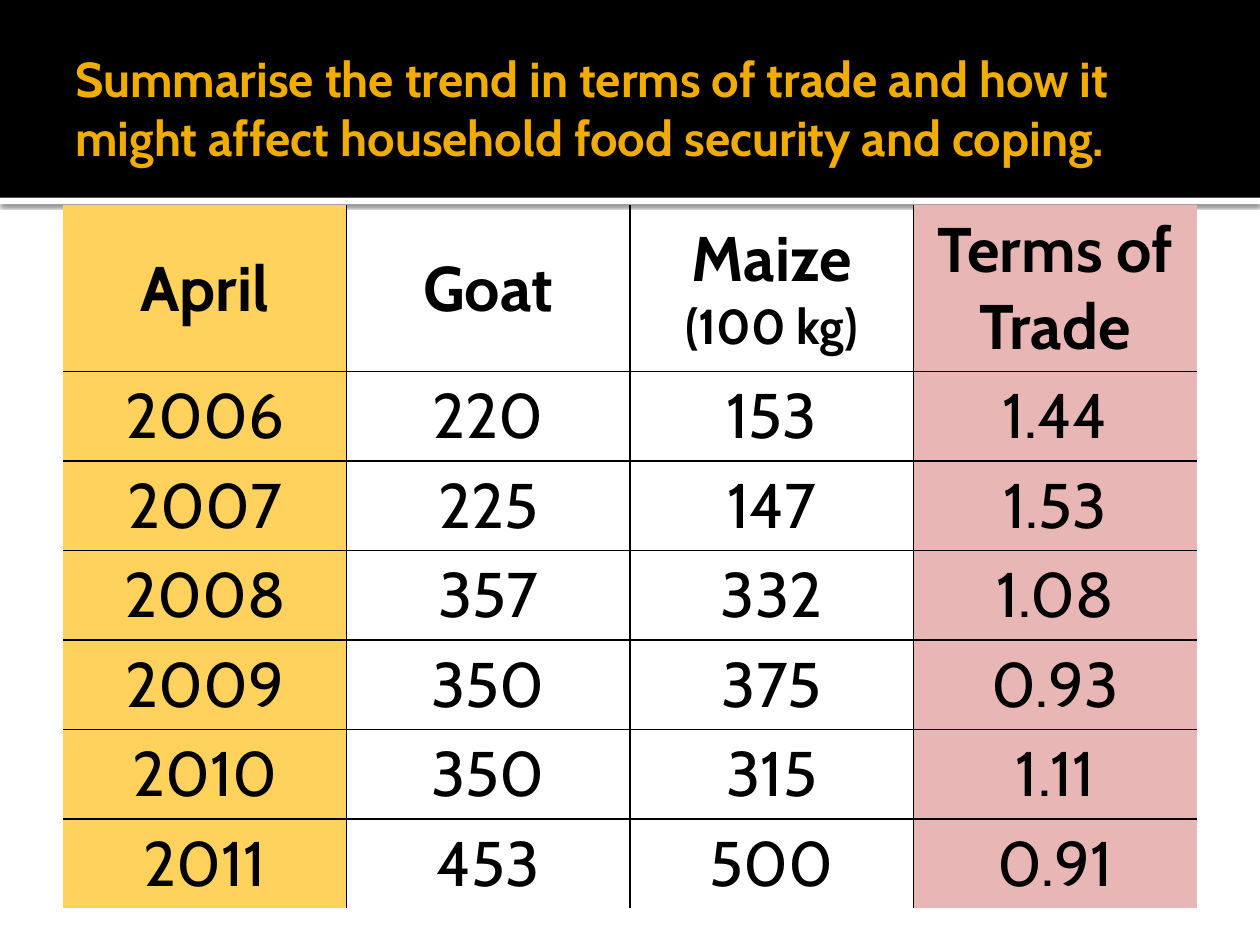
from lxml import etree
from pptx import Presentation
from pptx.dml.color import RGBColor
from pptx.enum import shapes, text
from pptx.oxml.ns import qn
from pptx.util import Inches, Pt

FONT = "Cabin"
BLACK, WHITE, AMBER = "000000", "FFFFFF", "F0AD00"
COLUMN_FILLS = ["FFD25D", None, None, "E8B6B5"]
HEADERS = ["April", "Goat", "Maize\n(100 kg)", "Terms of Trade"]
PRICES = [
    ["2006", "220", "153", "1.44"],
    ["2007", "225", "147", "1.53"],
    ["2008", "357", "332", "1.08"],
    ["2009", "350", "375", "0.93"],
    ["2010", "350", "315", "1.11"],
    ["2011", "453", "500", "0.91"],
]


def rgb(color):
    return RGBColor.from_string(color)


def write(tf, content, sizes=(36,), color=BLACK, bold=False, align=text.PP_ALIGN.LEFT):
    """Write one paragraph per line of content, each with its own size."""
    for i, (line, size) in enumerate(zip(content.split("\n"), sizes)):
        p = tf.paragraphs[0] if i == 0 else tf.add_paragraph()
        p.alignment = align
        r = p.add_run()
        r.text = line
        r.font.name, r.font.size, r.font.bold = FONT, Pt(size), bold
        r.font.color.rgb = rgb(color)


def add_bar(s, left, top, width, height, color):
    sp = s.shapes.add_shape(shapes.MSO_SHAPE.RECTANGLE, Inches(left), Inches(top),
                            Inches(width), Inches(height))
    sp.fill.solid()
    sp.fill.fore_color.rgb = rgb(color)
    sp.line.fill.background()
    sp.shadow.inherit = False
    return sp


def add_shadow(sp, color, alpha, blur, distance):
    effects = sp._element.spPr.find(qn("a:effectLst"))
    shadow = etree.SubElement(effects, qn("a:outerShdw"), blurRad=str(Pt(blur)),
                              dist=str(Pt(distance)), dir="5400000", rotWithShape="0")
    clr = etree.SubElement(shadow, qn("a:srgbClr"), val=color)
    etree.SubElement(clr, qn("a:alpha"), val=str(alpha * 1000))


def add_title_band(s, left, top, width, height):
    rule = add_bar(s, left, top + height, width, 0.05, WHITE)
    add_shadow(rule, BLACK, alpha=60, blur=2.5, distance=0.8)
    add_bar(s, left, top, width, height, BLACK)
    box = s.shapes.add_textbox(Inches(left + 0.5), Inches(top + 0.17),
                               Inches(width - 1), Inches(height - 0.2))
    tf = box.text_frame
    tf.word_wrap = True
    tf.vertical_anchor = text.MSO_ANCHOR.MIDDLE
    tf.margin_right = Inches(0.05)
    write(tf, "Summarise the trend in terms of trade and how it might affect "
              "household food security and coping.", sizes=(28,), color=AMBER, bold=True)


def set_borders(cell, sides):
    """Draw the named sides (L, R, T, B) in black and clear the others."""
    tc_pr = cell._tc.get_or_add_tcPr()
    for i, side in enumerate("LRTB"):
        ln = etree.Element(qn(f"a:ln{side}"), w=str(Pt(1)))
        if side in sides:
            fill = etree.SubElement(ln, qn("a:solidFill"))
            etree.SubElement(fill, qn("a:srgbClr"), val=BLACK)
        else:
            etree.SubElement(ln, qn("a:noFill"))
        tc_pr.insert(i, ln)


def add_price_table(s, left, top, width, header_height, row_height):
    rows = [HEADERS] + PRICES
    n_rows, n_cols = len(rows), len(HEADERS)
    height = header_height + row_height * len(PRICES)
    table = s.shapes.add_table(n_rows, n_cols, Inches(left), Inches(top),
                               Inches(width), Inches(height)).table
    table.horz_banding = False
    for i, values in enumerate(rows):
        is_header = i == 0
        table.rows[i].height = Inches(header_height if is_header else row_height)
        for j, value in enumerate(values):
            cell = table.cell(i, j)
            inner = {"L": j > 0, "R": j < n_cols - 1, "T": i > 0, "B": i < n_rows - 1}
            set_borders(cell, [side for side, drawn in inner.items() if drawn])
            if COLUMN_FILLS[j]:
                cell.fill.solid()
                cell.fill.fore_color.rgb = rgb(COLUMN_FILLS[j])
            else:
                cell.fill.background()
            if is_header:
                cell.vertical_anchor = text.MSO_ANCHOR.MIDDLE
            write(cell.text_frame, value, sizes=(36, 28), bold=is_header,
                  align=text.PP_ALIGN.CENTER)


def main():
    prs = Presentation()
    prs.slide_width, prs.slide_height = Inches(10), Inches(7.5)
    s = prs.slides.add_slide(prs.slide_layouts[6])
    add_title_band(s, 0, 0, 10, 1.57)
    add_price_table(s, 0.5, 1.63, 9, header_height=1.32, row_height=0.71)
    prs.save("out.pptx")


if __name__ == "__main__":
    main()
